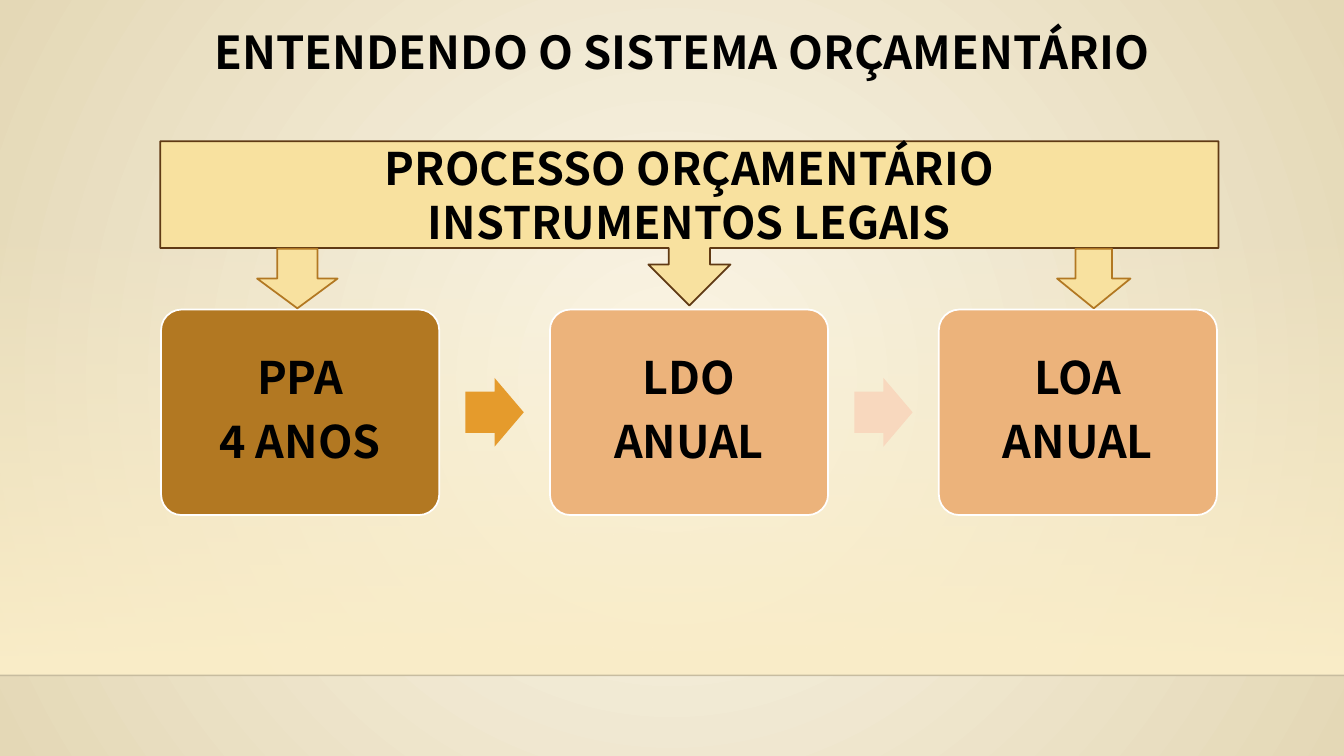
from lxml import etree
from pptx import Presentation
from pptx.dml.color import RGBColor
from pptx.enum import shapes, text
from pptx.oxml import parse_xml
from pptx.oxml.ns import nsdecls, qn
from pptx.util import Cm, Pt

# Content
TITLE = "ENTENDENDO O SISTEMA ORÇAMENTÁRIO"
PROCESS = ["PROCESSO ORÇAMENTÁRIO", "INSTRUMENTOS LEGAIS"]
CARDS = [
    (["PPA", "4 ANOS"], "B27822"),
    (["LDO", "ANUAL"], "ECB37B"),
    (["LOA", "ANUAL"], "ECB37B"),
]
STEP_COLORS = ["E59B2C", "F8D8BE"]
DOWN_ARROWS = [(6.48, 2.03), (26.64, 1.85)]  # left and width in cm

THEME = {
    "font": "Noto Sans CJK JP", "title_size": 32.4, "body_size": 32,
    "text": "000000", "center": "FBF6E9", "edge": "E4D8B6", "band": "FBEEC9",
    "callout": "F8E19F", "callout_line": "603A14", "arrow_line": "B27822",
    "card_line": "FFFFFF", "floor": "000001", "line_width": 1.25,
}

# Layout in cm
SLIDE_WIDTH, SLIDE_HEIGHT = 33.87, 19.05
BAND_TOP, FLOOR = 5.61, 17.02
CARD_LEFT, CARD_TOP, CARD_WIDTH, CARD_HEIGHT = 4.06, 7.8, 7.01, 5.18
CARD_PITCH = 9.8
STEP_WIDTH, STEP_HEIGHT = 1.47, 1.73


def gradient_fill(parent, stops, direction):
    """Replace the solid fill in parent by a gradient of (position, colour, opacity)."""
    stop_xml = "".join(
        f'<a:gs pos="{position * 1000}"><a:srgbClr val="{color}">'
        f'<a:alpha val="{opacity * 1000}"/></a:srgbClr></a:gs>'
        for position, color, opacity in stops)
    gradient = parse_xml(f'<a:gradFill {nsdecls("a")} rotWithShape="1">'
                         f'<a:gsLst>{stop_xml}</a:gsLst>{direction}</a:gradFill>')
    parent.replace(parent.find(qn("a:solidFill")), gradient)


def add_shape(slide, kind, left, top, width, height, fill, line=None):
    shape = slide.shapes.add_shape(kind, Cm(left), Cm(top), Cm(width), Cm(height))
    shape.shadow.inherit = False
    shape.fill.solid()
    shape.fill.fore_color.rgb = RGBColor.from_string(fill)
    if line:
        shape.line.color.rgb = RGBColor.from_string(line)
        shape.line.width = Pt(THEME["line_width"])
    else:
        shape.line.fill.background()
    return shape


def write(shape, lines, size, spacing=1.0, after=0):
    frame = shape.text_frame
    frame.word_wrap = True
    frame.text = "\n".join(lines)
    for paragraph in frame.paragraphs:
        paragraph.alignment = text.PP_ALIGN.CENTER
        paragraph.line_spacing = spacing
        paragraph.space_after = Pt(after)
        paragraph.font.name = THEME["font"]
        paragraph.font.size = Pt(size)
        paragraph.font.bold = True
        paragraph.font.color.rgb = RGBColor.from_string(THEME["text"])
    return frame


def add_backdrop(slide):
    slide.background.fill.solid()
    gradient_fill(slide.background._cSld.bg.bgPr,
                  [(0, THEME["center"], 100), (100, THEME["edge"], 100)],
                  '<a:path path="circle"><a:fillToRect l="50000" t="50000" '
                  'r="50000" b="50000"/></a:path>')
    band = add_shape(slide, shapes.MSO_SHAPE.RECTANGLE, 0, BAND_TOP,
                     SLIDE_WIDTH, FLOOR - BAND_TOP, THEME["band"])
    gradient_fill(band._element.spPr,
                  [(0, THEME["band"], 0), (100, THEME["band"], 100)],
                  '<a:lin ang="5400000" scaled="0"/>')

    floor = slide.shapes.add_connector(shapes.MSO_CONNECTOR.STRAIGHT, Cm(0), Cm(FLOOR),
                                       Cm(SLIDE_WIDTH), Cm(FLOOR))
    floor.line.color.rgb = RGBColor.from_string(THEME["floor"])
    floor.line.width = Pt(1)
    properties = floor._element.spPr
    color = properties.find(".//" + qn("a:srgbClr"))
    etree.SubElement(color, qn("a:alpha")).set("val", "20000")
    etree.SubElement(properties, qn("a:effectLst"))


def add_title(slide):
    title = slide.shapes.add_textbox(Cm(1.07), Cm(0.64), Cm(30.66), Cm(2.92))
    frame = write(title, [TITLE], THEME["title_size"], spacing=0.9)
    frame.margin_left = Cm(1.83)


def add_cards(slide):
    middle = CARD_TOP + CARD_HEIGHT / 2
    for index, (lines, color) in enumerate(CARDS):
        left = CARD_LEFT + index * CARD_PITCH
        card = add_shape(slide, shapes.MSO_SHAPE.ROUNDED_RECTANGLE, left, CARD_TOP,
                         CARD_WIDTH, CARD_HEIGHT, color, THEME["card_line"])
        card.adjustments[0] = 0.1
        frame = write(card, lines, THEME["body_size"], spacing=0.9, after=11.2)
        frame.vertical_anchor = text.MSO_ANCHOR.MIDDLE

    # Arrows centred in the gaps between cards
    for index, color in enumerate(STEP_COLORS):
        center = CARD_LEFT + index * CARD_PITCH + (CARD_WIDTH + CARD_PITCH) / 2
        step = add_shape(slide, shapes.MSO_SHAPE.RIGHT_ARROW, center - STEP_WIDTH / 2,
                         middle - STEP_HEIGHT / 2, STEP_WIDTH, STEP_HEIGHT, color)
        step.adjustments[0] = 0.6


def add_process(slide):
    callout = add_shape(slide, shapes.MSO_SHAPE.DOWN_ARROW_CALLOUT, 4.04, 3.56, 26.67,
                        4.14, THEME["callout"], THEME["callout_line"])
    frame = write(callout, PROCESS, THEME["body_size"])
    frame.vertical_anchor = text.MSO_ANCHOR.MIDDLE
    for left, width in DOWN_ARROWS:
        add_shape(slide, shapes.MSO_SHAPE.DOWN_ARROW, left, 6.27, width, 1.5,
                  THEME["callout"], THEME["arrow_line"])


def main():
    presentation = Presentation()
    presentation.slide_width = Cm(SLIDE_WIDTH)
    presentation.slide_height = Cm(SLIDE_HEIGHT)
    slide = presentation.slides.add_slide(presentation.slide_layouts[6])
    add_backdrop(slide)
    add_title(slide)
    add_cards(slide)
    add_process(slide)
    presentation.save("out.pptx")


if __name__ == "__main__":
    main()
